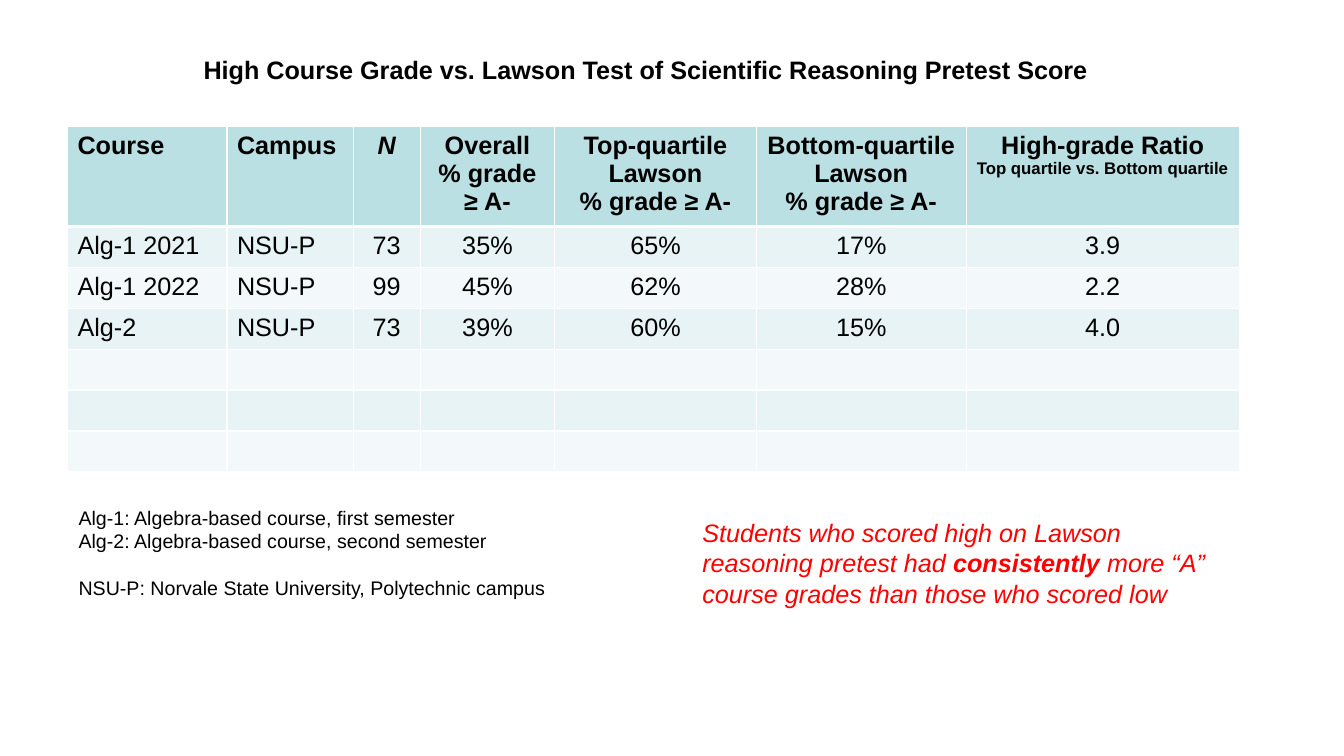
from dataclasses import dataclass

from lxml import etree
from pptx import Presentation
from pptx import util as u
from pptx.dml.color import RGBColor
from pptx.enum import text
from pptx.oxml import ns


@dataclass(frozen=True)
class Theme:
    font: str = "Arial"
    ink: str = "000000"
    accent: str = "FF0000"
    border: str = "FFFFFF"
    header: str = "BBE0E3"
    bands: tuple = ("E7F3F4", "F3F9FA")
    body_size: int = 18
    note_size: int = 14
    small_size: int = 12


THEME = Theme()

COLUMN_WIDTHS = (4.02, 3.18, 1.69, 3.39, 5.08, 5.29, 6.88)
HEADER_HEIGHT, ROW_HEIGHT = 2.53, 1.03
LEFT_COLUMNS = 2
HEADINGS = (
    ["Course"],
    ["Campus"],
    ["N"],
    ["Overall", "% grade ≥ A-"],
    ["Top-quartile Lawson", "% grade ≥ A-"],
    ["Bottom-quartile Lawson", "% grade ≥ A-"],
    ["High-grade Ratio", "Top quartile vs. Bottom quartile"],
)
RESULTS = (
    ("Alg-1 2021", "NSU-P", "73", "35%", "65%", "17%", "3.9"),
    ("Alg-1 2022", "NSU-P", "99", "45%", "62%", "28%", "2.2"),
    ("Alg-2", "NSU-P", "73", "39%", "60%", "15%", "4.0"),
)
EMPTY_ROWS = 3


def write(para, words, size=THEME.body_size, color=THEME.ink, bold=False, italic=False):
    """Add one formatted span to the paragraph."""
    span = para.add_run()
    span.text = words
    font = span.font
    font.name, font.size = THEME.font, u.Pt(size)
    font.bold, font.italic = bold, italic
    font.color.rgb = RGBColor.from_string(color)


def next_para(frame, index):
    return frame.paragraphs[0] if index == 0 else frame.add_paragraph()


def set_borders(cell, color, bottom):
    """Draw 1 pt borders on the cell, with its own width at the bottom."""
    properties = cell._tc.get_or_add_tcPr()
    for side, width in (("L", 1), ("R", 1), ("T", 1), ("B", bottom)):
        line = etree.SubElement(properties, ns.qn(f"a:ln{side}"), w=str(u.Pt(width)))
        fill = etree.SubElement(line, ns.qn("a:solidFill"))
        etree.SubElement(fill, ns.qn("a:srgbClr"), val=color)


class SlideBuilder:
    def __init__(self, theme, page):
        self.theme = theme
        self.page = page

    def text_box(self, left, top, width, height):
        box = self.page.shapes.add_textbox(u.Cm(left), u.Cm(top), u.Cm(width), u.Cm(height))
        box.text_frame.word_wrap = True
        return box.text_frame

    def title(self, words):
        frame = self.text_box(4.88, 1.25, 23.65, 1.02)
        write(frame.paragraphs[0], words, bold=True)

    def notes(self, lines):
        """Write (words, points of space before) pairs below the table."""
        frame = self.text_box(1.73, 12.62, 15.88, 2.6)
        for index, (words, gap) in enumerate(lines):
            para = next_para(frame, index)
            para.space_before = u.Pt(gap)
            para.line_spacing = u.Pt(16.7)
            write(para, words, size=self.theme.note_size)

    def conclusion(self, spans):
        """Write (words, bold) pairs as one paragraph."""
        para = self.text_box(17.45, 12.9, 13.44, 2.57).paragraphs[0]
        para.line_spacing = u.Pt(21.8)
        for words, bold in spans:
            write(para, words, color=self.theme.accent, bold=bold, italic=True)

    def cell(self, cell, lines, column, fill, heading=False):
        set_borders(cell, self.theme.border, bottom=3 if heading else 1)
        cell.fill.solid()
        cell.fill.fore_color.rgb = RGBColor.from_string(fill)
        centred = column >= LEFT_COLUMNS
        for index, words in enumerate(lines):
            para = next_para(cell.text_frame, index)
            para.alignment = text.PP_ALIGN.CENTER if centred else text.PP_ALIGN.LEFT
            small = words.startswith("Top quartile vs.")
            size = self.theme.small_size if small else self.theme.body_size
            write(para, words, size=size, bold=heading, italic=words == "N")

    def table(self, headings, results, empty_rows):
        blank = [[]] * len(headings)
        body = [[[value] for value in row] for row in results] + [blank] * empty_rows
        height = HEADER_HEIGHT + ROW_HEIGHT * len(body)
        grid = self.page.shapes.add_table(
            len(body) + 1, len(headings), u.Cm(1.7), u.Cm(3.18),
            u.Cm(sum(COLUMN_WIDTHS)), u.Cm(height),
        ).table
        for column, width in zip(grid.columns, COLUMN_WIDTHS):
            column.width = u.Cm(width)
        for number, row in enumerate([headings] + body):
            heading = number == 0
            grid.rows[number].height = u.Cm(HEADER_HEIGHT if heading else ROW_HEIGHT)
            fill = self.theme.header if heading else self.theme.bands[(number - 1) % 2]
            for column, lines in enumerate(row):
                self.cell(grid.cell(number, column), lines, column, fill, heading)


def main():
    deck = Presentation()
    deck.slide_width, deck.slide_height = u.Cm(33.87), u.Cm(19.05)
    builder = SlideBuilder(THEME, deck.slides.add_slide(deck.slide_layouts[6]))
    builder.table(HEADINGS, RESULTS, EMPTY_ROWS)
    builder.notes((
        ("Alg-1: Algebra-based course, first semester", 0),
        ("Alg-2: Algebra-based course, second semester", 0),
        ("NSU-P: Norvale State University, Polytechnic campus", 16.7),
    ))
    builder.conclusion((
        ("Students who scored high on Lawson reasoning pretest had ", False),
        ("consistently", True),
        (" more “A” course grades than those who scored low", False),
    ))
    builder.title("High Course Grade vs. Lawson Test of Scientific Reasoning Pretest Score")
    deck.save("out.pptx")


if __name__ == "__main__":
    main()
